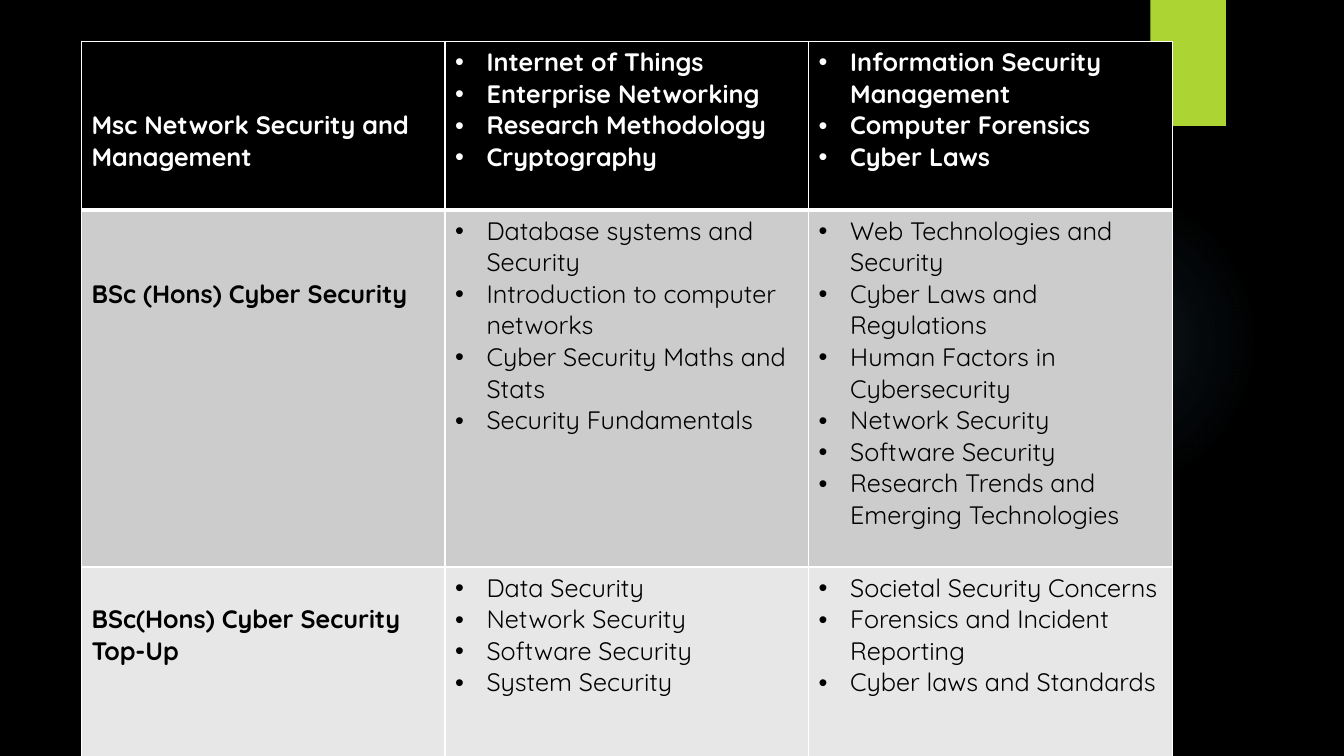
from pptx import Presentation
from pptx.dml.color import RGBColor
from pptx.enum.shapes import MSO_SHAPE as Shape
from pptx.oxml import parse_xml
from pptx.oxml.ns import nsdecls
from pptx.util import Pt

BLACK = RGBColor(0x00, 0x00, 0x00)
WHITE = RGBColor(0xFF, 0xFF, 0xFF)
LIME = RGBColor(0xAC, 0xD4, 0x33)
SKY = RGBColor(0x7A, 0xC4, 0xF0)
MID_GREY = RGBColor(0xCC, 0xCC, 0xCC)
LIGHT_GREY = RGBColor(0xE7, 0xE7, 0xE7)

# Course, blank lines above its name, first and second module lists
COURSES = [
    ("Msc Network Security and Management", 2,
     ["Internet of Things", "Enterprise Networking", "Research Methodology",
      "Cryptography"],
     ["Information Security Management", "Computer Forensics", "Cyber Laws"]),
    ("BSc (Hons) Cyber Security", 2,
     ["Database systems and Security", "Introduction to computer networks",
      "Cyber Security Maths and Stats", "Security Fundamentals"],
     ["Web Technologies and Security", "Cyber Laws and Regulations",
      "Human Factors in Cybersecurity", "Network Security",
      "Software Security", "Research Trends and Emerging Technologies"]),
    ("BSc(Hons) Cyber Security Top-Up", 1,
     ["Data Security", "Network Security", "Software Security",
      "System Security"],
     ["Societal Security Concerns", "Forensics and Incident Reporting",
      "Cyber laws and Standards"]),
]
ROW_HEIGHTS = [120.5, 255, 136]
ROW_FILLS = [BLACK, MID_GREY, LIGHT_GREY]
COLUMN_WIDTH = 259.7


class SlideBuilder:
    font_name = "Quicksand"
    font_size = 18
    line_height = 22.6
    cell_margin = 3.6
    bullet_indent = 22.5

    def __init__(self, slide):
        self.slide = slide

    def background(self, color):
        fill = self.slide.background.fill
        fill.solid()
        fill.fore_color.rgb = color

    def shape(self, kind, left, top, width, height, color):
        shape = self.slide.shapes.add_shape(
            kind, Pt(left), Pt(top), Pt(width), Pt(height))
        shape.shadow.inherit = False
        shape.fill.solid()
        shape.fill.fore_color.rgb = color
        shape.line.fill.background()
        return shape

    def glow(self, left, top, size, color, stops):
        shape = self.shape(Shape.OVAL, left, top, size, size, color)
        stop_xml = "".join(
            f'<a:gs pos="{position * 1000}"><a:srgbClr val="{color}">'
            f'<a:alpha val="{alpha * 1000}"/></a:srgbClr></a:gs>'
            for position, alpha in stops)
        gradient = parse_xml(
            f'<a:gradFill {nsdecls("a")}><a:gsLst>{stop_xml}</a:gsLst>'
            '<a:path path="circle"><a:fillToRect l="50000" t="50000" '
            'r="50000" b="50000"/></a:path></a:gradFill>')
        properties = shape._element.spPr
        properties.replace(properties.find("{*}solidFill"), gradient)

    def table(self, left, top, column_width, row_heights, columns):
        frame = self.slide.shapes.add_table(
            len(row_heights), columns, Pt(left), Pt(top),
            Pt(column_width * columns), Pt(sum(row_heights)))
        for column in frame.table.columns:
            column.width = Pt(column_width)
        for row, height in zip(frame.table.rows, row_heights):
            row.height = Pt(height)
        return frame.table

    def cell(self, cell, lines, fill, color, bold, blank_lines=0,
             bullets=False, top_line=1, bottom_line=1):
        cell.fill.solid()
        cell.fill.fore_color.rgb = fill
        cell.margin_top = Pt(self.cell_margin + blank_lines * self.line_height)
        self.borders(cell, top_line, bottom_line)
        cell.text = "\n".join(lines)
        for paragraph in cell.text_frame.paragraphs:
            if bullets:
                self.bullet(paragraph)
            font = paragraph.font
            font.name = self.font_name
            font.size = Pt(self.font_size)
            font.bold = bold
            font.color.rgb = color

    def borders(self, cell, top_line, bottom_line):
        widths = {"lnL": 1, "lnR": 1, "lnT": top_line, "lnB": bottom_line}
        properties = cell._tc.get_or_add_tcPr()
        for index, (side, width) in enumerate(widths.items()):
            properties.insert(index, parse_xml(
                f'<a:{side} {nsdecls("a")} w="{Pt(width)}"><a:solidFill>'
                f'<a:srgbClr val="{WHITE}"/></a:solidFill></a:{side}>'))

    def bullet(self, paragraph):
        properties = paragraph._p.get_or_add_pPr()
        properties.set("marL", str(Pt(self.bullet_indent)))
        properties.set("indent", str(-Pt(self.bullet_indent)))
        for tag in ('buFont {} typeface="Arial"', 'buChar {} char="•"'):
            properties.append(parse_xml(f'<a:{tag.format(nsdecls("a"))}/>'))


def main():
    presentation = Presentation()
    presentation.slide_width = Pt(960)
    presentation.slide_height = Pt(540)
    builder = SlideBuilder(
        presentation.slides.add_slide(presentation.slide_layouts[6]))

    # Backdrop
    builder.background(BLACK)
    builder.glow(677.5, 132, 222, SKY, [(0, 7), (36, 6), (69, 0)])
    builder.shape(Shape.RECTANGLE, 821.7, 0, 54, 90, LIME)

    # Course table
    table = builder.table(58.2, 29.5, COLUMN_WIDTH, ROW_HEIGHTS, 3)
    for row, (course, blank_lines, *modules) in enumerate(COURSES):
        header = row == 0
        style = {"fill": ROW_FILLS[row], "color": WHITE if header else BLACK,
                 "top_line": 3 if row == 1 else 1,
                 "bottom_line": 3 if header else 1}
        builder.cell(table.cell(row, 0), [course], bold=True,
                     blank_lines=blank_lines, **style)
        for column, names in enumerate(modules, start=1):
            builder.cell(table.cell(row, column), names, bold=header,
                         bullets=True, **style)

    presentation.save("out.pptx")


if __name__ == "__main__":
    main()
